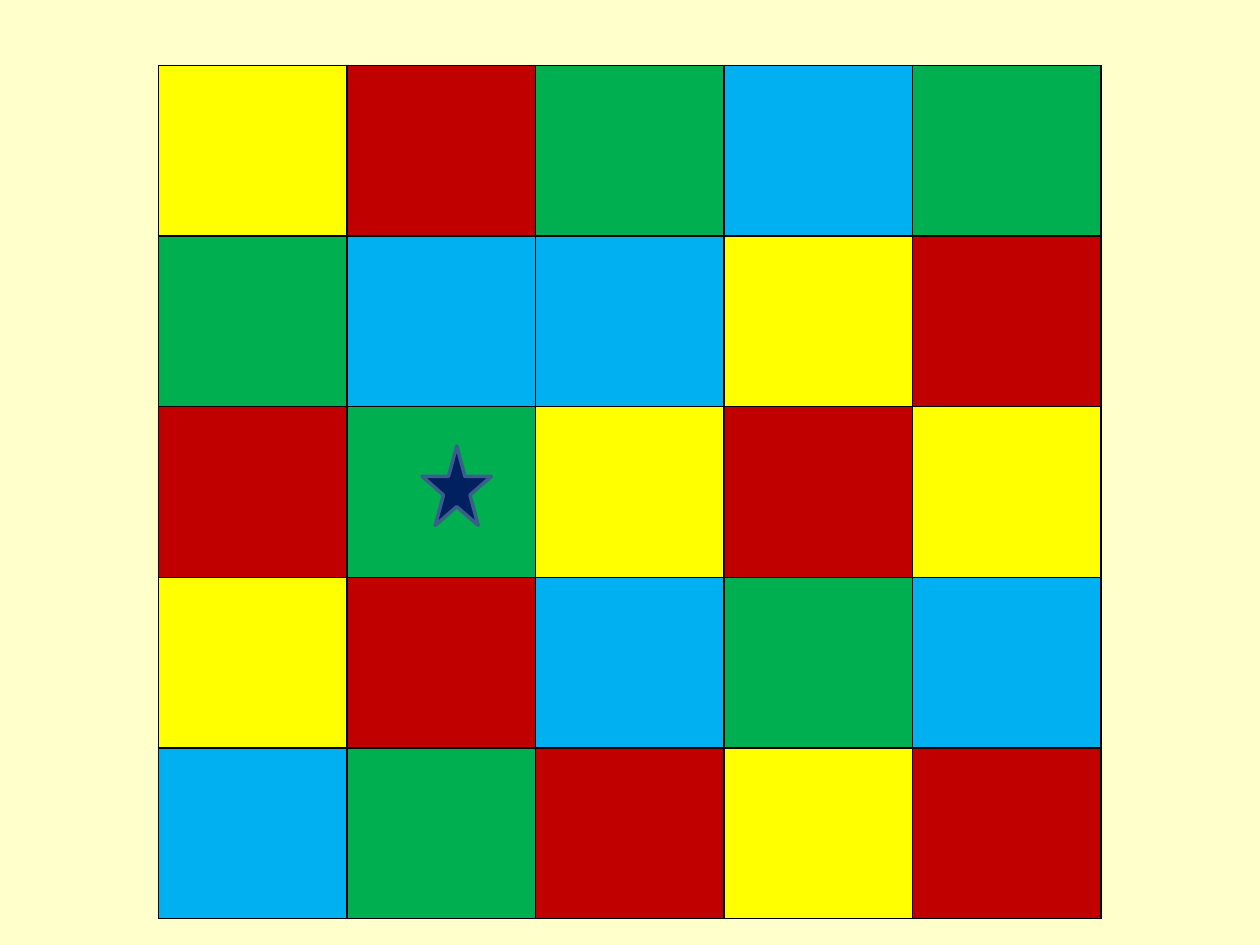
"""Build a slide with a five-by-five colour grid and a star marker."""
from dataclasses import dataclass

from lxml import etree
from pptx import Presentation
from pptx.dml.color import RGBColor
from pptx.enum.shapes import MSO_SHAPE
from pptx.oxml.ns import qn
from pptx.util import Inches, Pt

STAR = MSO_SHAPE.STAR_5_POINT
CREAM = RGBColor(0xFF, 0xFF, 0xCC)
YELLOW = RGBColor(0xFF, 0xFF, 0x00)
RED = RGBColor(0xC0, 0x00, 0x00)
GREEN = RGBColor(0x00, 0xB0, 0x50)
BLUE = RGBColor(0x00, 0xB0, 0xF0)
BLACK = RGBColor(0x00, 0x00, 0x00)
NAVY = RGBColor(0x00, 0x20, 0x60)
STEEL = RGBColor(0x3A, 0x5F, 0x8C)
COLOURS = {"Y": YELLOW, "R": RED, "G": GREEN, "B": BLUE}


@dataclass(frozen=True)
class Frame:
    left: float
    top: float
    width: float
    height: float

    def lengths(self) -> tuple:
        return tuple(map(Inches, (self.left, self.top, self.width, self.height)))


@dataclass(frozen=True)
class ColourGrid:
    frame: Frame
    rows: tuple[str, ...]


BOARD = ColourGrid(
    Frame(1.26, 0.52, 7.48, 6.77),
    ("YRGBG", "GBBYR", "RGYRY", "YRBGB", "BGRYR"),
)
MARKER = Frame(3.35, 3.54, 0.55, 0.63)


def add_borders(cell, colour: RGBColor, width: int) -> None:
    properties = cell._tc.get_or_add_tcPr()
    for index, side in enumerate(("a:lnL", "a:lnR", "a:lnT", "a:lnB")):
        line = etree.Element(qn(side), w=str(width))
        fill = etree.SubElement(line, qn("a:solidFill"))
        etree.SubElement(fill, qn("a:srgbClr"), val=str(colour))
        properties.insert(index, line)


def add_grid(slide, grid: ColourGrid) -> None:
    row_count, column_count = len(grid.rows), len(grid.rows[0])
    table = slide.shapes.add_table(row_count, column_count, *grid.frame.lengths()).table
    table.first_row = False
    table.horz_banding = False
    for column in table.columns:
        column.width = Inches(grid.frame.width / column_count)
    for row, codes in zip(table.rows, grid.rows):
        row.height = Inches(grid.frame.height / row_count)
        for cell, code in zip(row.cells, codes):
            cell.fill.solid()
            cell.fill.fore_color.rgb = COLOURS[code]
            add_borders(cell, BLACK, Pt(1))


def add_star(slide, frame: Frame) -> None:
    star = slide.shapes.add_shape(STAR, *frame.lengths())
    star.shadow.inherit = False
    star.fill.solid()
    star.fill.fore_color.rgb = NAVY
    star.line.color.rgb = STEEL
    star.line.width = Pt(2)


def main() -> None:
    deck = Presentation()
    deck.slide_width = Inches(10)
    deck.slide_height = Inches(7.5)
    page = deck.slides.add_slide(deck.slide_layouts[6])
    page.background.fill.solid()
    page.background.fill.fore_color.rgb = CREAM
    add_grid(page, BOARD)
    add_star(page, MARKER)
    deck.save("out.pptx")


if __name__ == "__main__":
    main()
